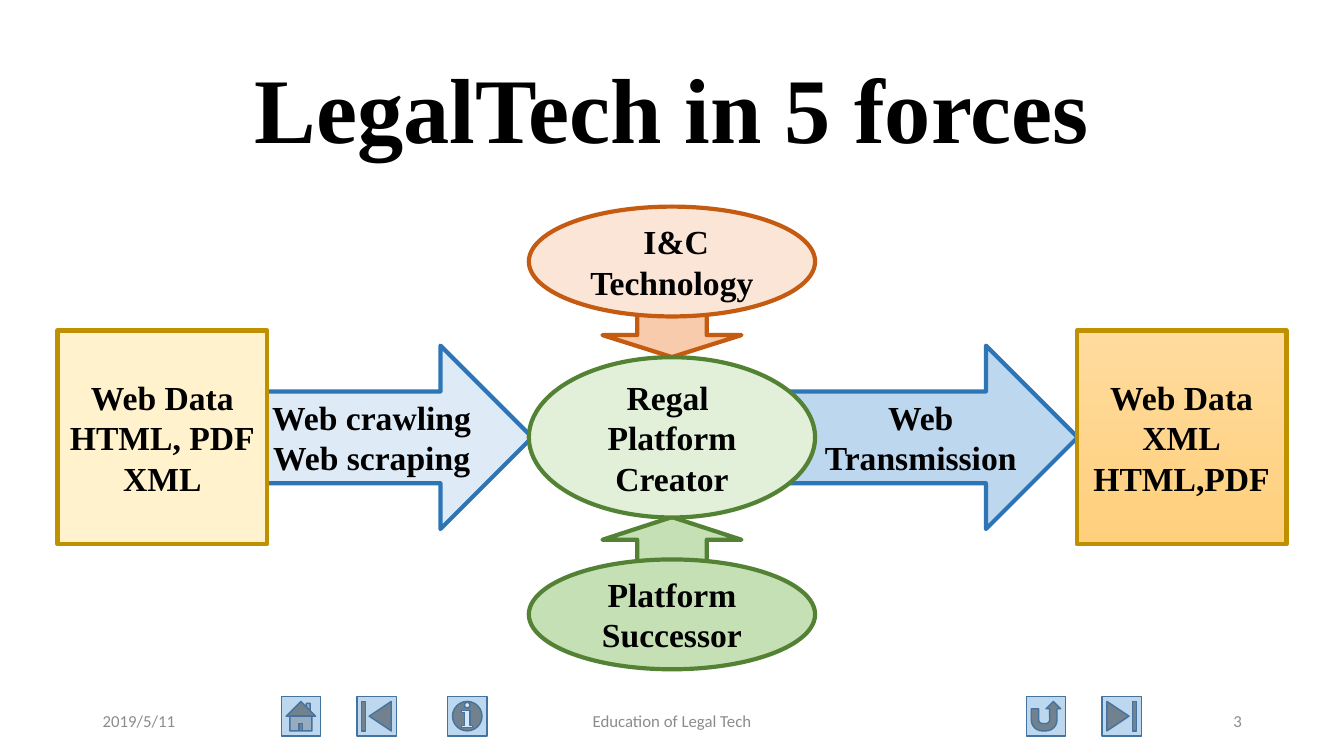
from pptx import Presentation
from pptx.dml.color import RGBColor
from pptx.enum import shapes, text
from pptx import util as u

KIND = shapes.MSO_SHAPE
ALIGN = text.PP_ALIGN
SERIF, SANS = "Times New Roman", "Calibri"
BLACK, GREY = "000000", "8C8C8C"
BLUE, ORANGE, GREEN, GOLD = "2E75B6", "C55A11", "548235", "BF9000"
PALE_BLUE, PALE_GREEN = "BDD7EE", "C5E0B4"
MIDDLE, FLOW, FOOT = 50, 57.85, 95.33  # centre column, flow row, footer row


def rgb(value):
    return RGBColor.from_string(value)


class ForcesSlide:
    """Places elements by centre and size, in percent of the slide."""

    def __init__(self, deck):
        self.width, self.height = deck.slide_width, deck.slide_height
        self.shapes = deck.slides.add_slide(deck.slide_layouts[6]).shapes

    def frame(self, cx, cy, w, h):
        return (int(self.width * (cx - w / 2) / 100),
                int(self.height * (cy - h / 2) / 100),
                int(self.width * w / 100), int(self.height * h / 100))

    def set_lines(self, holder, lines, size=24, font=SERIF, color=BLACK,
                  bold=True, align=ALIGN.CENTER, spacing=None):
        body = holder.text_frame
        body.word_wrap = True
        body.vertical_anchor = text.MSO_ANCHOR.MIDDLE
        body.text = lines
        for paragraph in body.paragraphs:
            paragraph.alignment = align
            paragraph.line_spacing = spacing
            paragraph.font.size = u.Pt(size)
            paragraph.font.name = font
            paragraph.font.bold = bold
            paragraph.font.color.rgb = rgb(color)

    def label(self, lines, cx, cy, w, h, **style):
        self.set_lines(self.shapes.add_textbox(*self.frame(cx, cy, w, h)), lines, **style)

    def force(self, kind, cx, cy, w, h, fill, line, lines="", weight=3, indent=0.1):
        """Draw a filled shape; a pair of fills makes a vertical gradient."""
        shape = self.shapes.add_shape(kind, *self.frame(cx, cy, w, h))
        shape.shadow.inherit = False
        if isinstance(fill, tuple):
            shape.fill.gradient()
            shape.fill.gradient_angle = 270
            for stop, color in zip(shape.fill.gradient_stops, fill):
                stop.color.rgb = rgb(color)
        else:
            shape.fill.solid()
            shape.fill.fore_color.rgb = rgb(fill)
        shape.line.color.rgb = rgb(line)
        shape.line.width = u.Pt(weight)
        if lines:
            self.set_lines(shape, lines)
            shape.text_frame.margin_left = u.Inches(indent)

    def button(self, kind, cx):
        self.force(kind, cx, 94.73, 2.93, 5.2, PALE_BLUE, "43739E", weight=1)

    def footer(self, words, cx, w, align):
        self.label(words, cx, FOOT, w, 5.33, size=12, font=SANS,
                   color=GREY, bold=False, align=align)


def main():
    deck = Presentation()
    deck.slide_width, deck.slide_height = u.Inches(13.33), u.Inches(7.5)
    slide = ForcesSlide(deck)

    for kind, cx in ((KIND.ACTION_BUTTON_HOME, 22.39),
                     (KIND.ACTION_BUTTON_BEGINNING, 28.02),
                     (KIND.ACTION_BUTTON_INFORMATION, 34.77),
                     (KIND.ACTION_BUTTON_RETURN, 77.83),
                     (KIND.ACTION_BUTTON_END, 83.46)):
        slide.button(kind, cx)

    slide.label("LegalTech in 5 forces", MIDDLE, 15, 86.25, 13.47, size=66, spacing=0.9)
    slide.footer("2019/5/11", 18.15, 22.5, ALIGN.LEFT)
    slide.footer("Education of Legal Tech", MIDDLE, 33.75, ALIGN.CENTER)
    slide.footer("3", 81.9, 22.5, ALIGN.RIGHT)

    slide.force(KIND.RIGHT_ARROW, 29.36, FLOW, 20.48, 24.27, "DEEBF7", BLUE,
                "Web crawling\nWeb scraping")
    slide.force(KIND.RIGHT_ARROW, 68.34, FLOW, 23.7, 24.27, PALE_BLUE, BLUE,
                "Web Transmission", indent=0.6)
    slide.force(KIND.DOWN_ARROW, MIDDLE, 44.33, 10.35, 5.8, "F8CBAD", ORANGE)
    slide.force(KIND.UP_ARROW, MIDDLE, 71.4, 10.35, 6, PALE_GREEN, GREEN)

    for cx, fill, lines in (
            (12.08, "FFF2CC", "Web Data\nHTML, PDF\nXML"),
            (87.92, ("FFDB9E", "FFD07C"), "Web Data\nXML\nHTML,PDF")):
        slide.force(KIND.RECTANGLE, cx, FLOW, 15.6, 28.27, fill, GOLD, lines)

    for cy, h, fill, line, lines in (
            (FLOW, 21.2, "E2F0D9", GREEN, "Regal \nPlatform\nCreator"),
            (34.6, 14.53, "FBE5D6", ORANGE, " I&C\nTechnology"),
            (81.27, 14.53, PALE_GREEN, GREEN, "Platform\vSuccessor")):
        slide.force(KIND.OVAL, MIDDLE, cy, 21.3, h, fill, line, lines)

    deck.save("out.pptx")


if __name__ == "__main__":
    main()
